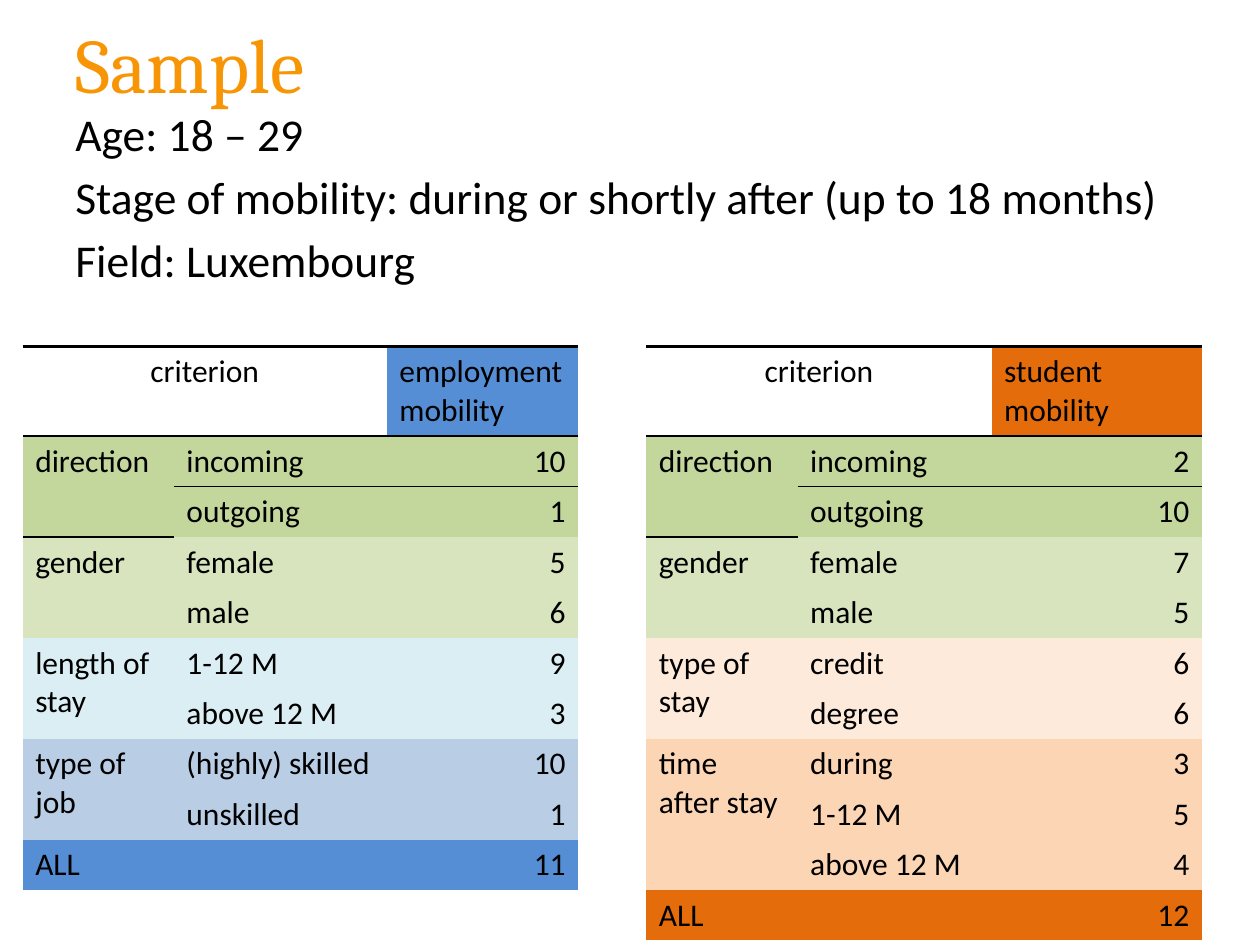
from lxml import etree
from pptx import Presentation
from pptx.dml.color import RGBColor
from pptx.enum.text import MSO_ANCHOR as Anchor, MSO_AUTO_SIZE as AutoSize, PP_ALIGN as Align
from pptx.oxml.ns import qn
from pptx.util import Inches, Pt

THEME = {
    "heading_font": "Cambria", "body_font": "Calibri",
    "title_size": 44, "body_size": 26, "table_size": 18,
    "title": "F79505", "ink": "000000",
    "employment": "558ED5", "student": "E46C0A",
    "direction": "C3D69B", "gender": "D7E4BD",
    "length": "DBEEF4", "job": "B9CDE5",
    "stay": "FDEADA", "time": "FCD5B5",
}
PLAIN_TABLE_STYLE = "{2D5ABB26-0587-4C30-8999-92F81FD0307C}"


def write(paragraph, text, size, color="ink", font="body_font", align=Align.LEFT):
    paragraph.alignment = align
    run = paragraph.add_run()
    run.text = text
    run.font.name = THEME[font]
    run.font.size = Pt(THEME[size])
    run.font.color.rgb = RGBColor.from_string(THEME[color])


def rule(cell, edge, points=1):
    properties = cell._tc.get_or_add_tcPr()
    line = etree.Element(qn(f"a:{edge}"), w=str(Pt(points)))
    fill = etree.SubElement(line, qn("a:solidFill"))
    etree.SubElement(fill, qn("a:srgbClr"), val=THEME["ink"])
    properties.insert(0, line)


presentation = Presentation()
presentation.slide_width, presentation.slide_height = Inches(10), Inches(7.5)
column, row = presentation.slide_width // 100, presentation.slide_height // 75
slide = presentation.slides.add_slide(presentation.slide_layouts[5])

title = slide.shapes.title
title.left, title.top, title.width, title.height = 5 * column, int(0.2 * row), 90 * column, int(9.6 * row)
title.text_frame.auto_size = AutoSize.NONE
title.text_frame.vertical_anchor = Anchor.MIDDLE
write(title.text_frame.paragraphs[0], "Sample", "title_size", "title", "heading_font")

facts = slide.shapes.add_textbox(5 * column, int(7.9 * row), 95 * column, int(17.3 * row)).text_frame
facts.word_wrap = True
for index, fact in enumerate([
    "Age: 18 – 29",
    "Stage of mobility: during or shortly after (up to 18 months)",
    "Field: Luxembourg",
]):
    paragraph = facts.paragraphs[0] if index == 0 else facts.add_paragraph()
    paragraph.space_before = Pt(5)
    write(paragraph, fact, "body_size")

samples = [
    (1.8, [12, 16.9, 15.2], "employment", 11, [
        ("direction", "direction", [("incoming", 10), ("outgoing", 1)]),
        ("gender", "gender", [("female", 5), ("male", 6)]),
        ("length of stay", "length", [("1-12 M", 9), ("above 12 M", 3)]),
        ("type of job", "job", [("(highly) skilled", 10), ("unskilled", 1)]),
    ]),
    (51.3, [12, 15.4, 16.7], "student", 12, [
        ("direction", "direction", [("incoming", 2), ("outgoing", 10)]),
        ("gender", "gender", [("female", 7), ("male", 5)]),
        ("type of stay", "stay", [("credit", 6), ("degree", 6)]),
        ("time after stay", "time", [("during", 3), ("1-12 M", 5), ("above 12 M", 4)]),
    ]),
]

for left, widths, group, total, criteria in samples:
    lines = [("criterion", "", f"{group} mobility", None)]
    merges = []
    for criterion, color, values in criteria:
        merges.append((len(lines), len(lines) + len(values) - 1))
        for index, (label, count) in enumerate(values):
            lines.append((criterion if index == 0 else "", label, str(count), color))
    lines.append(("ALL", "", str(total), group))

    frame = slide.shapes.add_table(
        len(lines), len(widths), int(left * column), int(27.5 * row),
        int(sum(widths) * column), (4 * len(lines) + 3) * row)
    table = frame.table
    table.first_row = table.horz_banding = False
    table._tbl.tblPr.find(qn("a:tableStyleId")).text = PLAIN_TABLE_STYLE
    for table_column, width in zip(table.columns, widths):
        table_column.width = int(width * column)
    for number, (table_row, line) in enumerate(zip(table.rows, lines)):
        table_row.height = 4 * row if number else int(7.1 * row)
        *texts, color = line
        for position, (cell, text) in enumerate(zip(table_row.cells, texts)):
            fill = group if number == 0 and position == 2 else color
            if fill:
                cell.fill.solid()
                cell.fill.fore_color.rgb = RGBColor.from_string(THEME[fill])
            else:
                cell.fill.background()
            if text:
                align = Align.LEFT
                if number == 0 and position == 0:
                    align = Align.CENTER
                elif number and position == 2:
                    align = Align.RIGHT
                write(cell.text_frame.paragraphs[0], text, "table_size", align=align)
            if number < 2:
                rule(cell, "lnB")
                rule(cell, "lnT", 1 if number else 1.5)

    table.cell(0, 0).merge(table.cell(0, 1))
    for first, last in merges:
        table.cell(first, 0).merge(table.cell(last, 0))

presentation.save("out.pptx")
